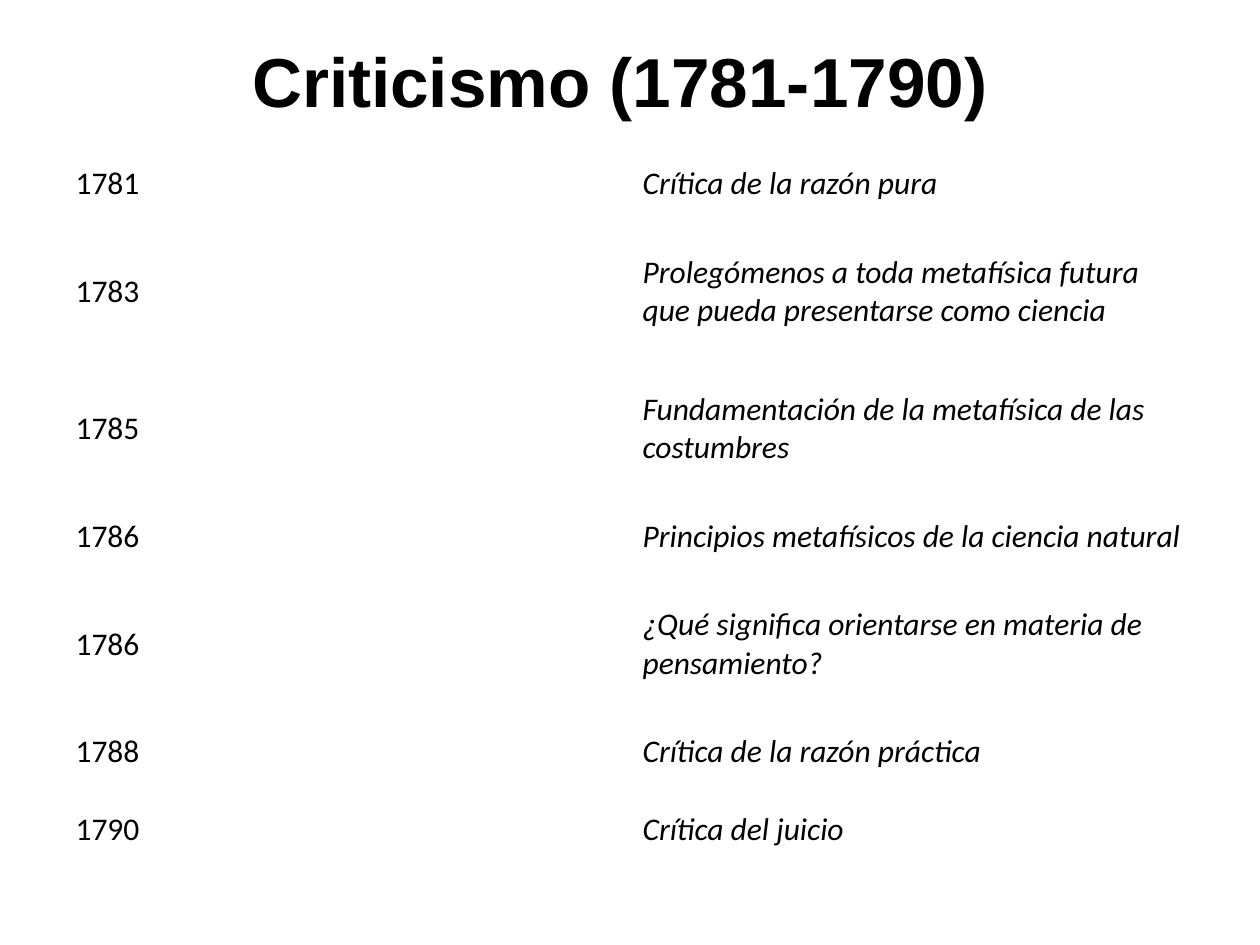
from typing import NamedTuple

from pptx import Presentation
from pptx.dml.color import RGBColor
from pptx.enum.text import MSO_ANCHOR, PP_ALIGN
from pptx.util import Emu, Pt

EMU_PER_PX = 9144  # 100 px to the inch
COLORS = {"text": "000000"}
TITLE_FONT = {"name": "Arial", "size": Pt(39.6), "bold": True}
CELL_FONT = {"name": "Calibri", "size": Pt(18), "bold": False}
COLUMN_WIDTH = 450
LINE_HEIGHTS = {1: 62, 2: 109}


class Work(NamedTuple):
    year: str
    title: str
    lines: int = 1


WORKS = [
    Work("1781", "Crítica de la razón pura"),
    Work("1783", "Prolegómenos a toda metafísica futura que pueda presentarse como ciencia", 2),
    Work("1785", "Fundamentación de la metafísica de las costumbres", 2),
    Work("1786", "Principios metafísicos de la ciencia natural"),
    Work("1786", "¿Qué significa orientarse en materia de pensamiento?", 2),
    Work("1788", "Crítica de la razón práctica"),
    Work("1790", "Crítica del juicio"),
]


def px(n: int) -> Emu:
    return Emu(n * EMU_PER_PX)


def write(p, text: str, font: dict, align=PP_ALIGN.LEFT) -> None:
    p.alignment = align
    r = p.add_run()
    r.text = text
    for name, value in font.items():
        setattr(r.font, name, value)
    r.font.color.rgb = RGBColor.from_string(COLORS["text"])


def add_title(s, text: str) -> None:
    sp = s.shapes.title
    sp.left, sp.top, sp.width, sp.height = map(px, (50, 30, 900, 125))
    tf = sp.text_frame
    tf.word_wrap = True
    tf.vertical_anchor = MSO_ANCHOR.TOP
    tf.margin_top = 0
    tf.margin_right = px(26)
    write(tf.paragraphs[0], text, TITLE_FONT, PP_ALIGN.CENTER)


def add_works_table(s, works: list[Work]) -> None:
    heights = [LINE_HEIGHTS[work.lines] for work in works]
    frame = s.shapes.add_table(len(works), 2, px(50), px(115),
                               px(2 * COLUMN_WIDTH), px(sum(heights)))
    table = frame.table
    table.first_row = table.horz_banding = False
    for column in table.columns:
        column.width = px(COLUMN_WIDTH)
    for row, height, work in zip(table.rows, heights, works):
        row.height = px(height)
        for cell, text, italic in zip(row.cells, (work.year, work.title), (False, True)):
            cell.fill.background()
            cell.vertical_anchor = MSO_ANCHOR.MIDDLE
            write(cell.text_frame.paragraphs[0], text, CELL_FONT | {"italic": italic})


def main() -> None:
    prs = Presentation()
    prs.slide_width, prs.slide_height = px(1000), px(750)
    s = prs.slides.add_slide(prs.slide_layouts[5])
    add_title(s, "Criticismo (1781-1790)")
    add_works_table(s, WORKS)
    prs.save("out.pptx")


if __name__ == "__main__":
    main()
